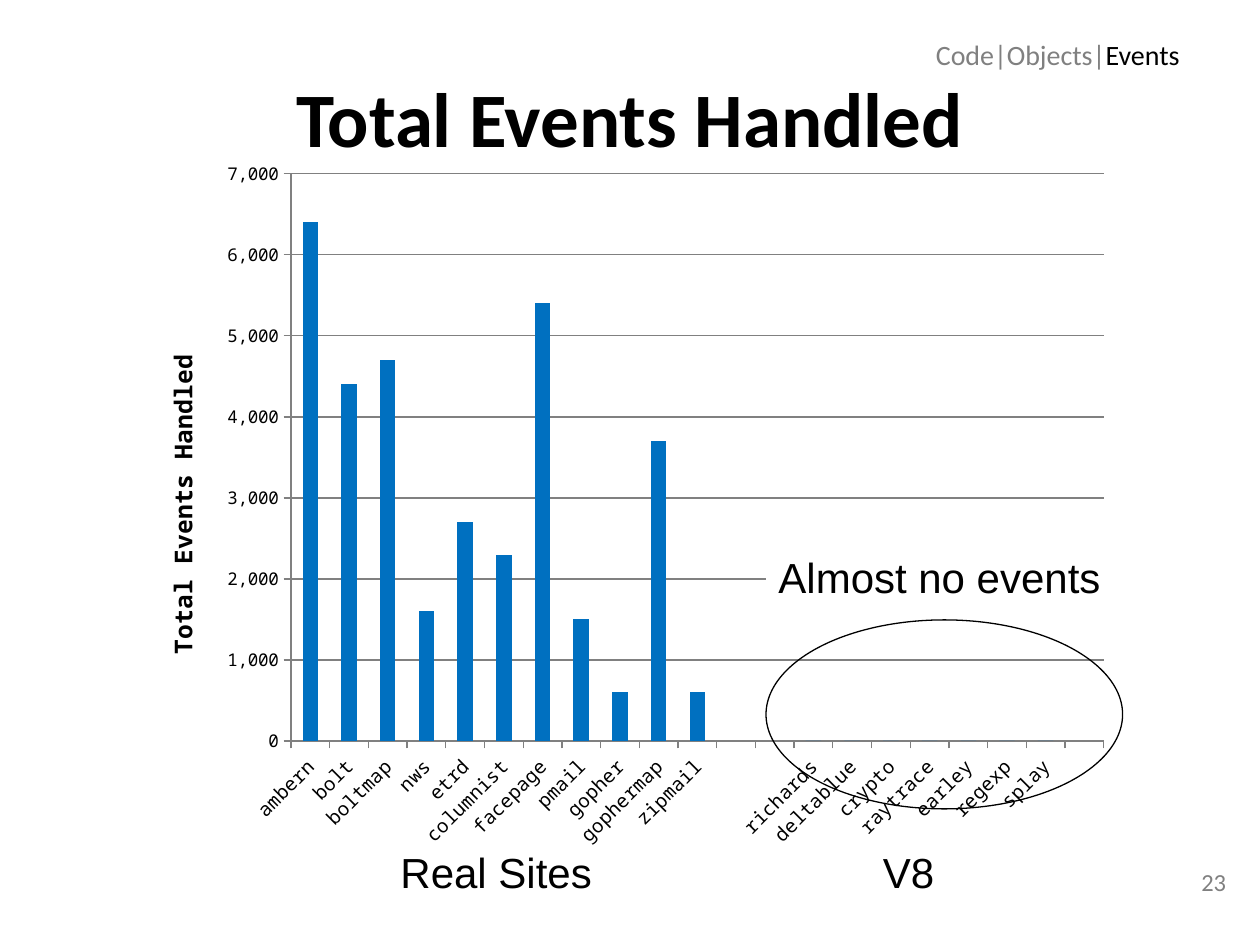
from lxml import etree
from pptx import Presentation
from pptx.chart.data import CategoryChartData
from pptx.dml.color import RGBColor
from pptx.enum.chart import XL_CHART_TYPE as Kind, XL_TICK_MARK as Tick
from pptx.enum.shapes import MSO_SHAPE as Shape
from pptx.enum.text import MSO_ANCHOR as Anchor, PP_ALIGN as Align
from pptx.oxml.ns import qn
from pptx.util import Inches, Pt

BLACK = RGBColor(0, 0, 0)
WHITE = RGBColor(255, 255, 255)
GRAY = RGBColor(128, 128, 128)
BLUE = RGBColor(0, 112, 192)
MONO = "Noto Sans Mono"

HEAD = "Total Events Handled"
SITES = [
    ("ambern", 6400), ("bolt", 4400), ("boltmap", 4700), ("nws", 1600),
    ("etrd", 2700), ("columnist", 2300), ("facepage", 5400), ("pmail", 1500),
    ("gopher", 600), ("gophermap", 3700), ("zipmail", 600),
]
GAP = [("", None)] * 2
TESTS = [(name, 0) for name in (
    "richards", "deltablue", "crypto", "raytrace", "earley", "regexp", "splay")]
BARS = SITES + GAP + TESTS + [("", None)]

# left, top, width, height; size; font; alignment; fill; runs
NOTES = [
    ((7.5, 6.83, 2.33, 0.52), 14, "Calibri", Align.RIGHT, None, [("23", GRAY)]),
    ((3.08, 6.67, 4.47, 0.5), 24, "Arial", Align.LEFT, None,
     [("Real Sites\tV8", BLACK)]),
    ((6.08, 4.33, 2.78, 0.5), 24, "Arial", Align.LEFT, WHITE,
     [("Almost no events", BLACK)]),
    ((7.33, 0.25, 2.5, 0.37), 16, "Calibri", Align.LEFT, None,
     [("Code|Objects|", GRAY), ("Events", BLACK)]),
]
TAB = 3.83
CHART = (1.08, 1.17, 7.83, 5.67)
PLOT = (2.31, 1.38, 6.45, 4.5)
RING = (6.08, 4.92, 2.83, 1.5)


def box(area):
    return [Inches(n) for n in area]


def style(font, size, name, color=BLACK, bold=False):
    font.size, font.name, font.bold = Pt(size), name, bold
    font.color.rgb = color


def place_plot(chart):
    """Fix the inner plot area at PLOT, as shares of the chart's size."""
    left, top, wide, high = CHART
    shares = {"x": (PLOT[0] - left) / wide, "y": (PLOT[1] - top) / high,
              "w": PLOT[2] / wide, "h": PLOT[3] / high}
    area = chart._chartSpace.chart.plotArea
    lay = area.find(qn("c:layout"))
    if lay is None:
        lay = etree.Element(qn("c:layout"))
        area.insert(0, lay)
    man = etree.SubElement(lay, qn("c:manualLayout"))
    rules = [("layoutTarget", "inner"), ("xMode", "edge"), ("yMode", "edge")]
    rules += [(key, f"{share:.3f}") for key, share in shares.items()]
    for key, val in rules:
        etree.SubElement(man, qn("c:" + key)).set("val", val)


def add_bars(slide):
    data = CategoryChartData()
    data.categories = [name for name, _ in BARS]
    data.add_series("Series 1", [val for _, val in BARS])
    chart = slide.shapes.add_chart(Kind.COLUMN_CLUSTERED, *box(CHART), data).chart
    chart.has_legend = chart.has_title = False
    style(chart.font, 10, MONO)
    plot = chart.plots[0]
    plot.gap_width, plot.vary_by_categories = 150, False
    fill = plot.series[0].format.fill
    fill.solid()
    fill.fore_color.rgb = BLUE

    cat, val = chart.category_axis, chart.value_axis
    for axis, size in ((cat, 11), (val, 10)):
        axis.major_tick_mark, axis.minor_tick_mark = Tick.OUTSIDE, Tick.NONE
        style(axis.tick_labels.font, size, MONO)
        axis.format.line.color.rgb = GRAY
    cat.tick_labels._element.txPr.bodyPr.set("rot", "-2700000")
    val.minimum_scale, val.maximum_scale, val.major_unit = 0, 7000, 1000
    val.tick_labels.number_format = "#,##0"
    val.tick_labels.number_format_is_linked = False
    val.has_major_gridlines = True
    val.major_gridlines.format.line.color.rgb = GRAY
    run = val.axis_title.text_frame.paragraphs[0].add_run()
    run.text = HEAD
    style(run.font, 14, MONO, bold=True)
    place_plot(chart)


def add_tab(para):
    tabs = etree.SubElement(para._p.get_or_add_pPr(), qn("a:tabLst"))
    tab = etree.SubElement(tabs, qn("a:tab"))
    tab.set("pos", str(Inches(TAB)))
    tab.set("algn", "l")


def add_note(slide, area, size, name, align, fill, runs):
    note = slide.shapes.add_textbox(*box(area))
    if fill is not None:
        note.fill.solid()
        note.fill.fore_color.rgb = fill
    para = note.text_frame.paragraphs[0]
    note.text_frame.word_wrap = name == "Calibri"
    para.alignment = align
    for text, color in runs:
        if "\t" in text:
            add_tab(para)
        run = para.add_run()
        run.text = text
        style(run.font, size, name, color)


def main():
    deck = Presentation()
    deck.slide_width, deck.slide_height = Inches(10), Inches(7.5)
    slide = deck.slides.add_slide(deck.slide_layouts[5])
    title = slide.shapes.title
    title.left, title.top, title.width, title.height = box((0.5, 0.3, 9, 1.25))
    title.text_frame.vertical_anchor = Anchor.MIDDLE
    para = title.text_frame.paragraphs[0]
    para.alignment = Align.CENTER
    run = para.add_run()
    run.text = HEAD
    style(run.font, 44, "Calibri", bold=True)

    add_bars(slide)
    ring = slide.shapes.add_shape(Shape.OVAL, *box(RING))
    ring.shadow.inherit = False
    ring.fill.background()
    ring.line.color.rgb, ring.line.width = BLACK, Pt(0.75)
    for note in NOTES:
        add_note(slide, *note)
    deck.save("out.pptx")


if __name__ == "__main__":
    main()
